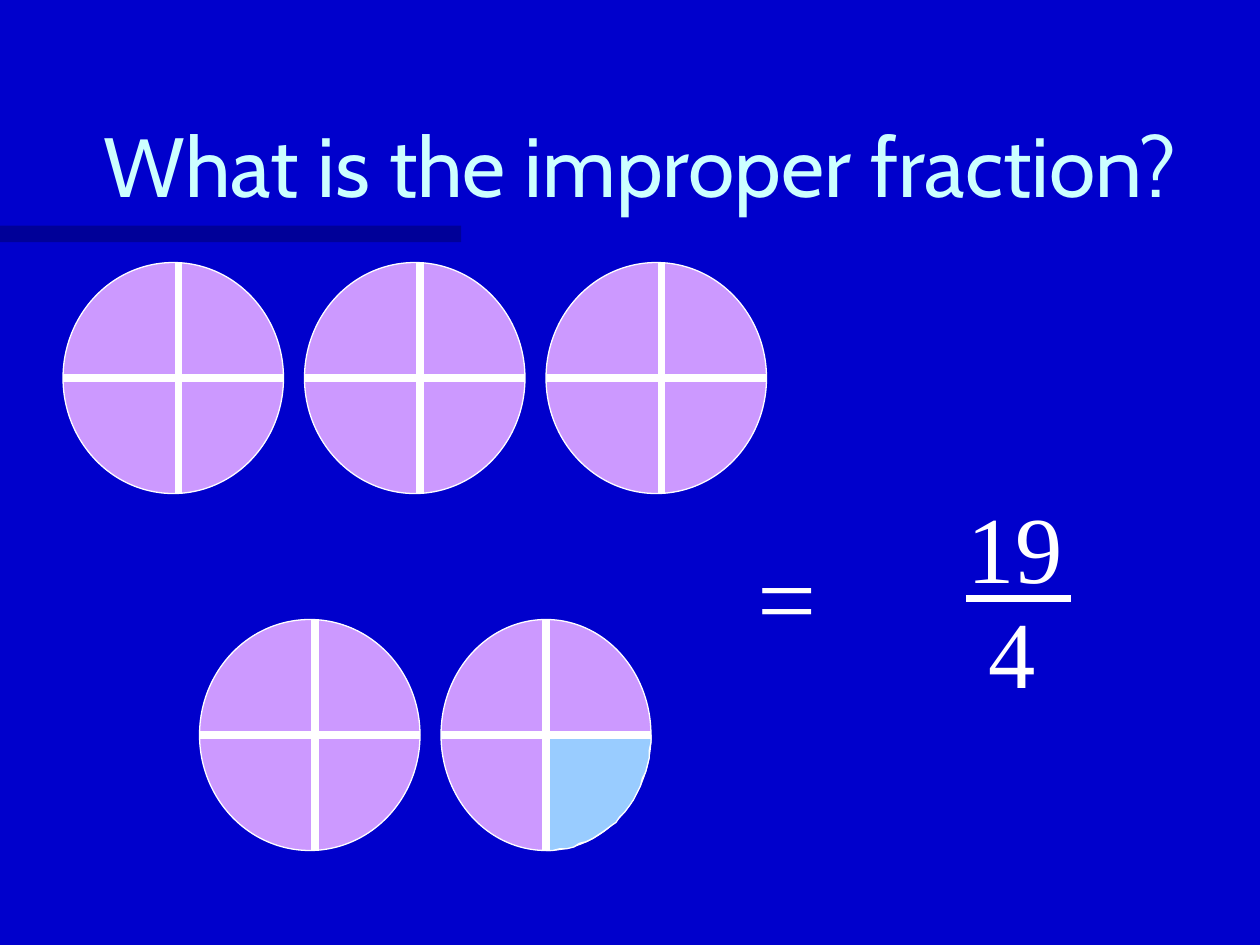
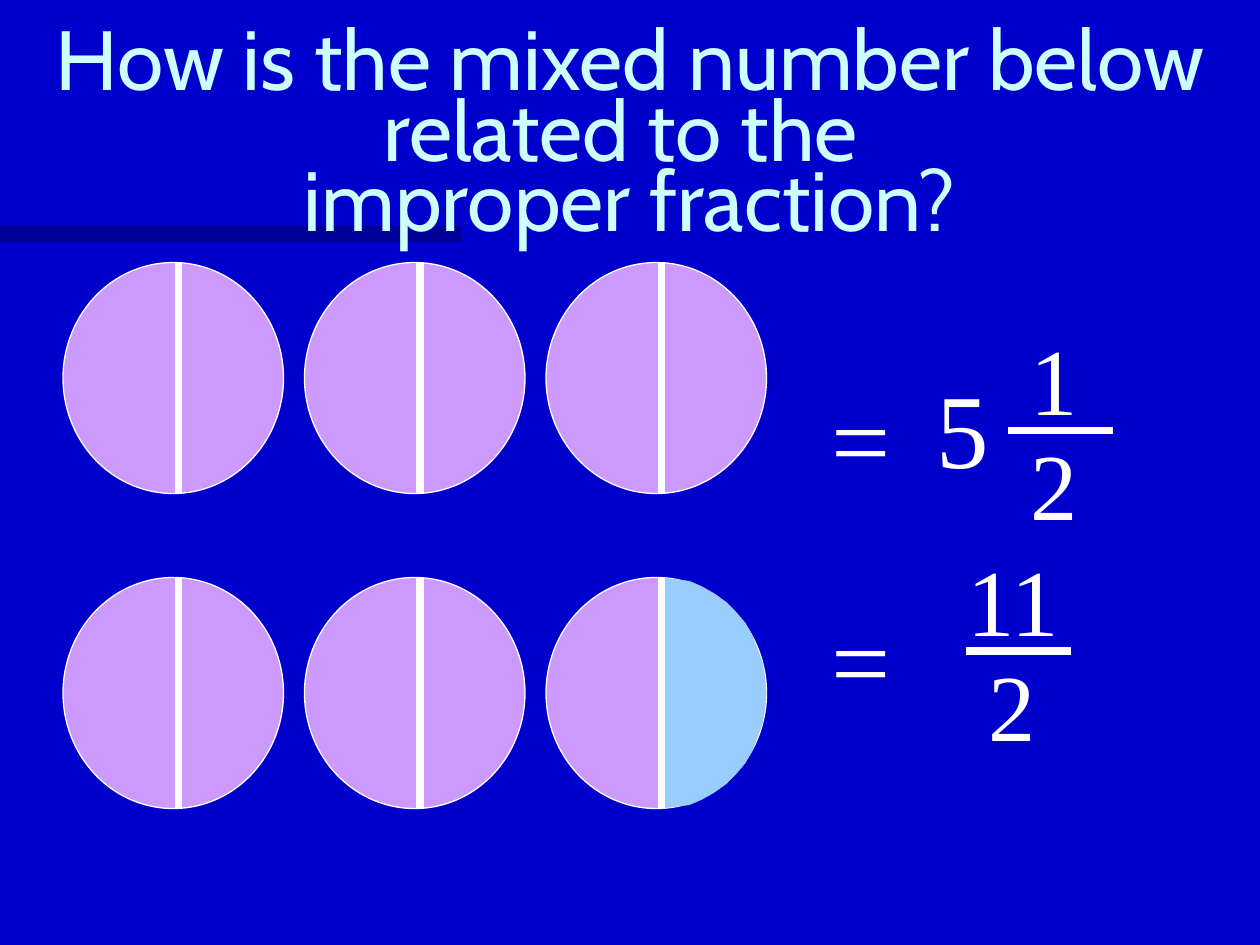
from math import cos, pi, sin

from lxml import etree
from pptx import Presentation
from pptx.dml.color import RGBColor
from pptx.enum.shapes import MSO_CONNECTOR, MSO_SHAPE
from pptx.enum.text import MSO_ANCHOR, MSO_AUTO_SIZE, PP_ALIGN
from pptx.oxml.ns import qn
from pptx.util import Pt

RECT, OVAL = MSO_SHAPE.RECTANGLE, MSO_SHAPE.OVAL
STRAIGHT = MSO_CONNECTOR.STRAIGHT
BOTTOM, CENTER = MSO_ANCHOR.BOTTOM, PP_ALIGN.CENTER
GROW = MSO_AUTO_SIZE.SHAPE_TO_FIT_TEXT

# Shared look
BLUE, BAND, WHITE = "0000CC", "000066", "FFFFFF"
PLUM, SKY, PALE = "CC99FF", "99CCFF", "CCFFFF"
HEAD = dict(name="Cabin", size=Pt(48), color=PALE)
SIGN = dict(name="Times New Roman", size=Pt(60), color=WHITE)
DIGIT = dict(SIGN, size=Pt(54))

# Pies: width, height, step to the next pie, offset of the upright cut
WIDE, HIGH, STEP, CUT = 126, 132, 138, 66

# Content; rows are (left, top, count), the last pie holds the part left over
SLIDES = [
    dict(
        title="What is the improper fraction?",
        box=(30, 36, 672, 90), space=1.0,
        rows=[(36, 150, 3), (114, 354, 2)],
        parts=4, last=(120, 60), edge=WHITE,
        signs=[("=", 426, 300, 48)],
        fracs=[("19", "4", 552, 342)],
    ),
    dict(
        title="How is the mixed number below related to the \vimproper fraction?",
        box=(0, 0, 720, 144), space=0.7,
        rows=[(36, 150, 3), (36, 330, 3)],
        parts=2, last=(WIDE, CUT), edge=None,
        signs=[("=", 468, 210, 48), ("5", 528, 204, 45), ("=", 468, 336, 48)],
        fracs=[("1", "2", 576, 246), ("11", "2", 552, 372)],
    ),
]


def rgb(code):
    return RGBColor.from_string(code)


def paint(shape, fill, edge=None):
    shape.shadow.inherit = False
    shape.fill.solid()
    shape.fill.fore_color.rgb = rgb(fill)
    if edge:
        shape.line.color.rgb = rgb(edge)
        shape.line.width = Pt(0.75)
    else:
        shape.line.fill.background()


def rule(slide, *ends):
    line = slide.shapes.add_connector(STRAIGHT, *map(Pt, ends))
    line.line.color.rgb = rgb(WHITE)
    line.line.width = Pt(4.5)
    etree.SubElement(line._element.spPr, qn("a:effectLst"))


def write(slide, text, box, style, wrap=False):
    frame = slide.shapes.add_textbox(*map(Pt, box)).text_frame
    frame.word_wrap = wrap
    para = frame.paragraphs[0]
    para.text = text
    for run in para.runs:
        for key, value in style.items():
            if key == "color":
                run.font.color.rgb = rgb(value)
            else:
                setattr(run.font, key, value)
    return frame


def base(deck, data):
    slide = deck.slides.add_slide(deck.slide_layouts[6])
    slide.background.fill.solid()
    slide.background.fill.fore_color.rgb = rgb(BLUE)
    # Half-clear band under the title
    band = slide.shapes.add_shape(RECT, 0, Pt(129), Pt(263.5), Pt(9.4))
    paint(band, BAND)
    color = band._element.spPr.find(qn("a:solidFill"))[0]
    etree.SubElement(color, qn("a:alpha"), val="50000")
    # Title
    frame = write(slide, data["title"], data["box"], HEAD, True)
    frame.vertical_anchor = BOTTOM
    para = frame.paragraphs[0]
    para.alignment = CENTER
    para.line_spacing = data["space"]
    return slide


def wedge(slide, x, y, reach, start, edge):
    """Blue part right of the cut, from the start angle to straight down."""
    steps = 24
    turns = [start + (pi / 2 - start) * i / steps for i in range(steps + 1)]
    arc = [(x + reach * cos(t), y + HIGH / 2 * sin(t)) for t in turns]
    form = slide.shapes.build_freeform(x, y, scale=Pt(1))
    form.add_line_segments(arc, close=True)
    paint(form.convert_to_shape(), SKY, edge)


def pie(slide, x, y, wide, cut, data, final):
    disc = slide.shapes.add_shape(OVAL, *map(Pt, (x, y, wide, HIGH)))
    paint(disc, PLUM, WHITE)
    mid = y + HIGH / 2
    if final:
        start = 0 if data["parts"] == 4 else -pi / 2
        wedge(slide, x + cut, mid, wide - cut, start, data["edge"])
    rule(slide, x + cut, y, x + cut, y + HIGH)
    if data["parts"] == 4:
        rule(slide, x, mid, x + wide, mid)


def ratio(slide, top, low, x, y):
    for text, up in ((top, 66), (low, 6)):
        shift, wide = (6, 42) if len(text) == 1 else (-6, 68.4)
        frame = write(slide, text, (x + shift, y - up, wide, 72), DIGIT)
        frame.auto_size = GROW
    rule(slide, x, y, x + 60, y)


def main():
    deck = Presentation()
    deck.slide_width, deck.slide_height = Pt(720), Pt(540)
    for data in SLIDES:
        slide = base(deck, data)
        spots = [(x + i * STEP, y) for x, y, n in data["rows"] for i in range(n)]
        for x, y in spots:
            final = (x, y) == spots[-1]
            size = data["last"] if final else (WIDE, CUT)
            pie(slide, x, y, *size, data, final)
        for text, x, y, wide in data["signs"]:
            write(slide, text, (x, y, wide, 79.2), SIGN).auto_size = GROW
        for frac in data["fracs"]:
            ratio(slide, *frac)
    deck.save("out.pptx")


if __name__ == "__main__":
    main()
